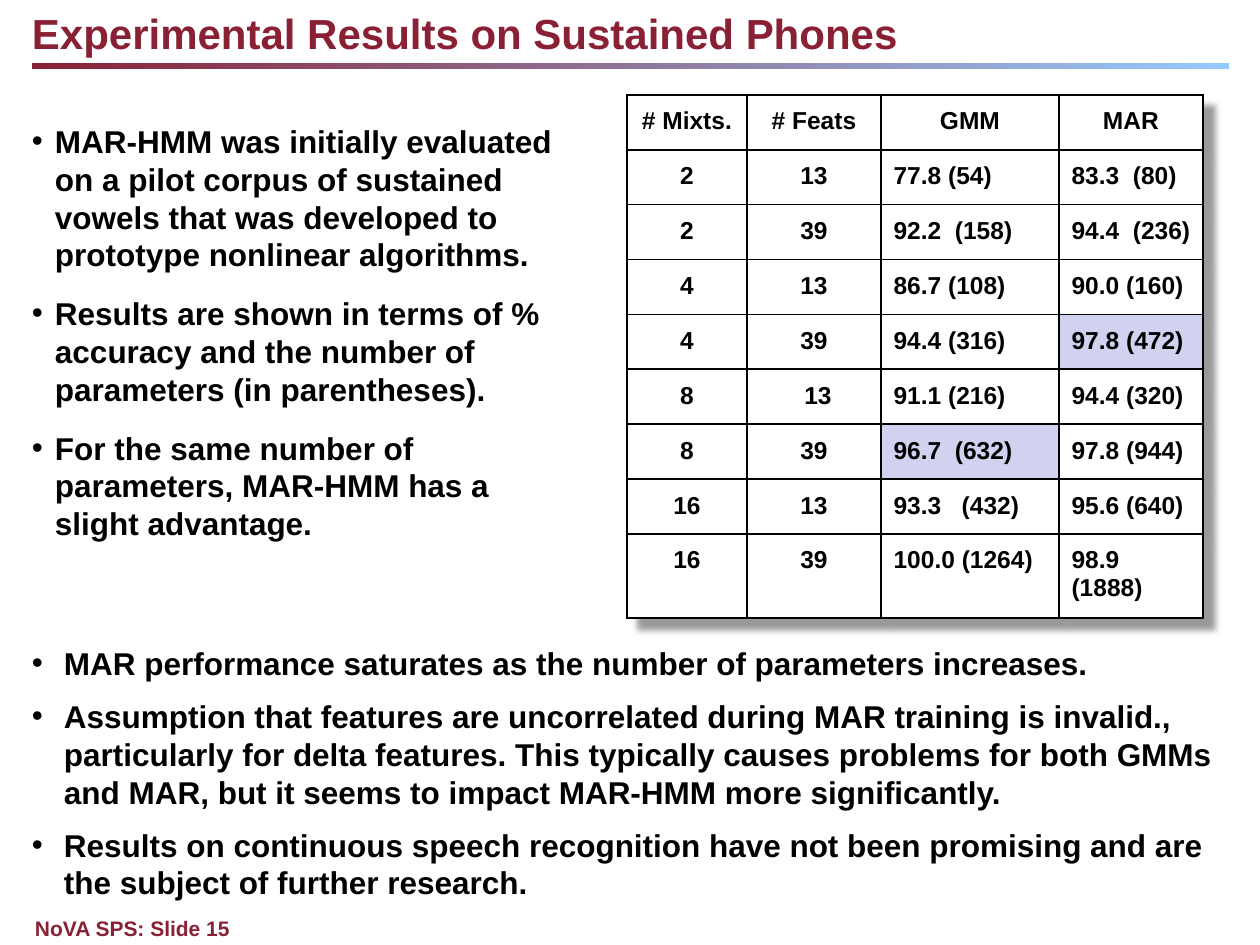
from itertools import pairwise

from lxml import etree
from pptx import Presentation
from pptx import util as u
from pptx.dml.color import RGBColor
from pptx.enum import shapes, text
from pptx.oxml import ns

COLORS = {
    "maroon": "892034",
    "sky": "95CAFF",
    "ink": "000000",
    "paper": "FFFFFF",
    "highlight": "D1D1F0",
}
PX = 914400 / 126

COLUMN_WIDTHS = [120, 134, 178, 144]
ROW_EDGES = [round(row * 164 / 3) for row in range(9)] + [521]
RESULTS = [
    ["# Mixts.", "# Feats", "GMM", "MAR"],
    ["2", "13", "77.8 (54)", "83.3  (80)"],
    ["2", "39", "92.2  (158)", "94.4  (236)"],
    ["4", "13", "86.7 (108)", "90.0 (160)"],
    ["4", "39", "94.4 (316)", "97.8 (472)"],
    ["8", "13", "91.1 (216)", "94.4 (320)"],
    ["8", "39", "96.7  (632)", "97.8 (944)"],
    ["16", "13", "93.3   (432)", "95.6 (640)"],
    ["16", "39", "100.0 (1264)", "98.9 (1888)"],
]
HIGHLIGHTED = {(4, 3), (6, 2)}
INDENTED = (5, 1)

SETUP_POINTS = [
    "MAR-HMM was initially evaluated on a pilot corpus of sustained vowels "
    "that was developed to prototype nonlinear algorithms.",
    "Results are shown in terms of % accuracy and the number of parameters "
    "(in parentheses).",
    "For the same number of parameters, MAR-HMM has a slight advantage.",
]
FINDINGS = [
    "MAR performance saturates as the number of parameters increases.",
    "Assumption that features are uncorrelated during MAR training is invalid., "
    "particularly for delta features. This typically causes problems for both "
    "GMMs and MAR, but it seems to impact MAR-HMM more significantly.",
    "Results on continuous speech recognition have not been promising and are "
    "the subject of further research.",
]


def emu(px):
    return u.Emu(round(px * PX))


def rgb(name):
    return RGBColor.from_string(COLORS[name])


def add_element(parent, tag, **attributes):
    return etree.SubElement(parent, ns.qn(tag), attributes)


class SlideBuilder:
    font_name = "Arial"

    def __init__(self, slide):
        self.slide = slide

    def style(self, paragraph, size, color):
        font = paragraph.font
        font.name, font.size, font.bold = self.font_name, u.Pt(size), True
        font.color.rgb = rgb(color)

    def gradient_bar(self, left, top, width, height, start, end):
        bar = self.slide.shapes.add_shape(
            shapes.MSO_SHAPE.RECTANGLE, *map(emu, (left, top, width, height)))
        bar.shadow.inherit = False
        bar.line.fill.background()
        bar.fill.gradient()
        bar.fill.gradient_angle = 0
        for stop, color in zip(bar.fill.gradient_stops, (start, end)):
            stop.color.rgb = rgb(color)

    def text_box(self, left, top, width, height, lines, size, color,
                 hanging=0, gap=0):
        box = self.slide.shapes.add_textbox(*map(emu, (left, top, width, height)))
        frame = box.text_frame
        frame.word_wrap = True
        frame.margin_left = frame.margin_right = 0
        frame.margin_top = frame.margin_bottom = 0
        frame.text = "\n".join(lines)
        for paragraph in frame.paragraphs:
            if hanging:
                properties = paragraph._p.get_or_add_pPr()
                properties.set("marL", str(emu(hanging)))
                properties.set("indent", str(-emu(hanging)))
                add_element(properties, "a:buFont", typeface=self.font_name)
                add_element(properties, "a:buChar", char="•")
                paragraph.space_after = u.Pt(gap)
            self.style(paragraph, size, color)

    def border(self, cell):
        properties = cell._tc.get_or_add_tcPr()
        for side in ("L", "R", "T", "B"):
            line = add_element(properties, f"a:ln{side}", w=str(u.Pt(1)))
            fill = add_element(line, "a:solidFill")
            add_element(fill, "a:srgbClr", val=COLORS["ink"])

    def table_shadow(self, table):
        effects = etree.Element(ns.qn("a:effectLst"))
        shadow = add_element(effects, "a:outerShdw", blurRad=str(emu(6)),
                             dist=str(emu(16)), dir="2700000", algn="tl",
                             rotWithShape="0")
        color = add_element(shadow, "a:srgbClr", val=COLORS["ink"])
        add_element(color, "a:alpha", val="40000")
        table._tbl.tblPr.insert(0, effects)

    def table(self, left, top, widths, edges, rows, size):
        grid = self.slide.shapes.add_table(
            len(rows), len(widths),
            *map(emu, (left, top, sum(widths), edges[-1]))).table
        grid.first_row = grid.horz_banding = False
        self.table_shadow(grid)
        for column, width in zip(grid.columns, widths):
            column.width = emu(width)
        for row, (upper, lower) in zip(grid.rows, pairwise(edges)):
            row.height = emu(lower - upper)
        for r, values in enumerate(rows):
            for c, value in enumerate(values):
                self.cell(grid.cell(r, c), value, r, c, size)

    def cell(self, cell, value, r, c, size):
        centred = r == 0 or c < 2
        self.border(cell)
        cell.fill.solid()
        cell.fill.fore_color.rgb = rgb(
            "highlight" if (r, c) in HIGHLIGHTED else "paper")
        cell.margin_left = 0 if centred else u.Inches(0.1)
        cell.margin_right = 0 if centred else u.Inches(0.05)
        cell.margin_top = cell.margin_bottom = u.Inches(0.1)
        cell.text = value
        paragraph = cell.text_frame.paragraphs[0]
        paragraph.alignment = (
            text.PP_ALIGN.CENTER if centred else text.PP_ALIGN.LEFT)
        if (r, c) == INDENTED:
            paragraph._p.get_or_add_pPr().set("indent", str(emu(8)))
        self.style(paragraph, size, "ink")


def main():
    deck = Presentation()
    deck.slide_width, deck.slide_height = emu(1260), emu(945)
    builder = SlideBuilder(deck.slides.add_slide(deck.slide_layouts[6]))

    builder.gradient_bar(32, 63, 1197, 6, "maroon", "sky")
    builder.text_box(35, 916, 1124, 25, ["NoVA SPS: Slide 15"], 12, "maroon")
    builder.table(627, 95, COLUMN_WIDTHS, ROW_EDGES, RESULTS, 14)
    builder.text_box(32, 8, 945, 50, ["Experimental Results on Sustained Phones"],
                     24, "maroon")
    builder.text_box(32, 122, 539, 432, SETUP_POINTS, 18, "ink",
                     hanging=23, gap=12)
    builder.text_box(32, 644, 1197, 260, FINDINGS, 18, "ink",
                     hanging=32, gap=8.7)
    deck.save("out.pptx")


if __name__ == "__main__":
    main()
